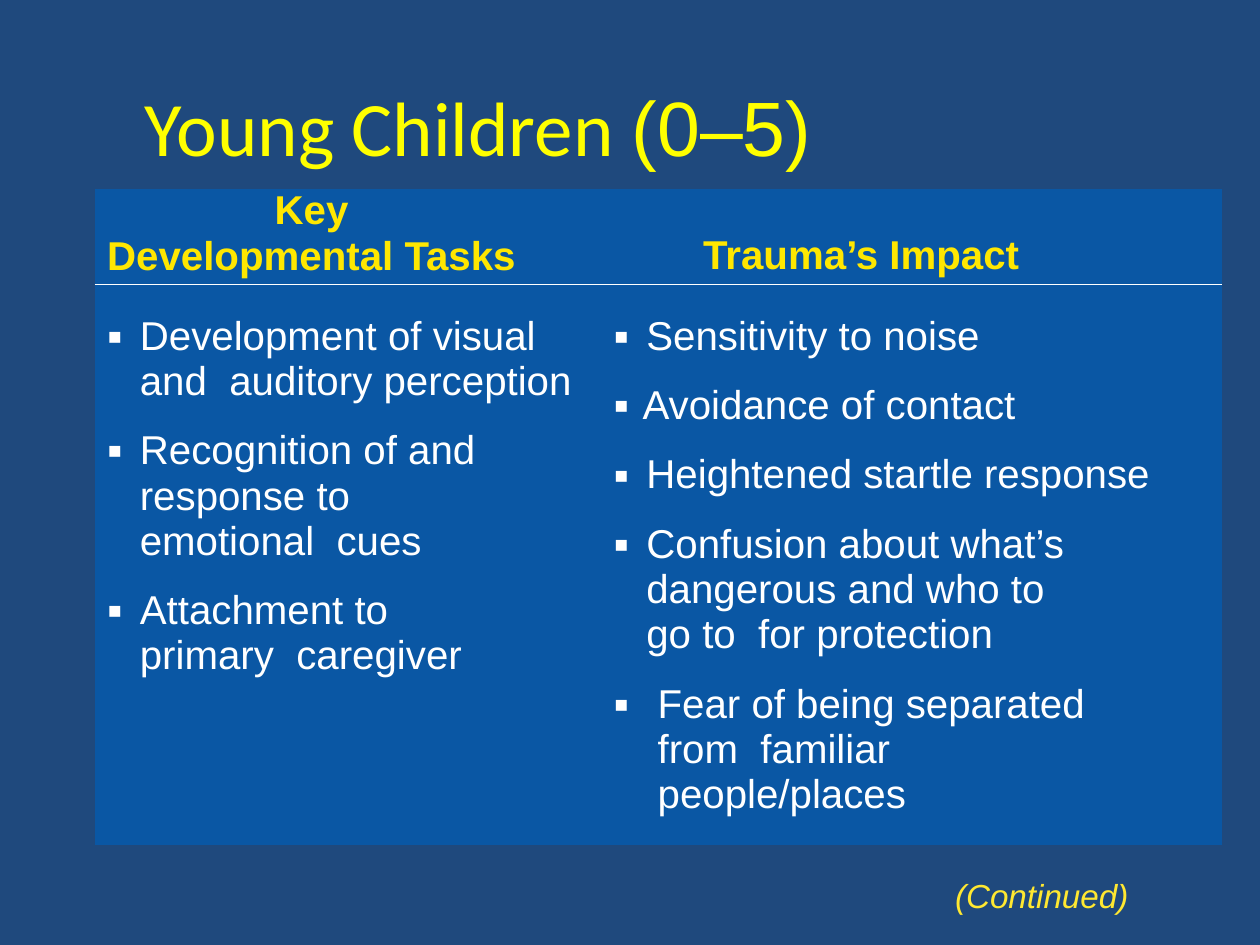
"""Build the slide on developmental tasks and trauma in young children."""
from dataclasses import dataclass

from lxml import etree
from pptx import Presentation
from pptx.dml.color import RGBColor
from pptx.enum.text import MSO_ANCHOR, PP_ALIGN
from pptx.oxml.ns import qn
from pptx.util import Inches, Pt

CENTER, LEFT = PP_ALIGN.CENTER, PP_ALIGN.LEFT
TOP = MSO_ANCHOR.TOP
COLUMNS, ROWS = 100, 75
SLIDE_WIDTH, SLIDE_HEIGHT = Inches(10), Inches(7.5)
NAVY, BLUE, WHITE = "1F497D", "0A57A4", "FFFFFF"
YELLOW, GOLD, PALE_GOLD = "FFFF00", "FFE701", "FFE831"


@dataclass(frozen=True)
class Box:
    """A rectangle in grid columns and rows."""
    left: float
    top: float
    width: float
    height: float


@dataclass(frozen=True)
class Heading:
    """A line of a header cell with its indent in grid columns."""
    text: str
    indent: float
    line_height: float | None = None


@dataclass(frozen=True)
class Bullet:
    """A bulleted line with its margins in grid columns."""
    text: str
    indent: float
    hanging: float = 2.6
    right: float = 0


TABLE = Box(7.5, 15, 89.5, 51.9)
COLUMN_WIDTHS = (39.6, 49.9)
ROW_HEIGHTS = (7.6, 44.3)
HEADING_TOPS = (0, 3.5)
BODY_TOP = 2.3
HEADINGS = (
    (Heading("Key", 14.3, 25.4), Heading("Developmental Tasks", 1)),
    (Heading("Trauma’s Impact", 8.7),),
)
BULLETS = (
    (
        Bullet("Development of visual and  auditory perception", 3.6),
        Bullet("Recognition of and response to emotional  cues", 3.6, right=7.5),
        Bullet("Attachment to primary  caregiver", 3.6, right=7.5),
    ),
    (
        Bullet("Sensitivity to noise", 4.2),
        Bullet("Avoidance of contact", 3.9, 2.3),
        Bullet("Heightened startle response", 4.2),
        Bullet("Confusion about what’s dangerous and who to go to  for protection",
               4.2, right=11.3),
        Bullet("Fear of being separated from  familiar people/places", 5.1, 3.5, 9),
    ),
)


def across(columns: float) -> int:
    """Turn grid columns into a length."""
    return round(SLIDE_WIDTH * columns / COLUMNS)


def down(rows: float) -> int:
    """Turn grid rows into a length."""
    return round(SLIDE_HEIGHT * rows / ROWS)


def place(box: Box) -> tuple[int, int, int, int]:
    """Turn a grid box into left, top, width and height."""
    return across(box.left), down(box.top), across(box.width), down(box.height)


def paint(target, color: str) -> None:
    """Give a fill a solid colour."""
    target.solid()
    target.fore_color.rgb = RGBColor.from_string(color)


def write(paragraph, text: str, *, size: float, color: str, font: str = "Arial",
          bold: bool = False, italic: bool = False, align=LEFT,
          before: float = 0, line_height: float | None = None) -> None:
    """Add a formatted run to a paragraph."""
    paragraph.alignment = align
    paragraph.space_before = Pt(before)
    if line_height:
        paragraph.line_spacing = Pt(line_height)
    run = paragraph.add_run()
    run.text = text
    run.font.name, run.font.size = font, Pt(size)
    run.font.bold, run.font.italic = bold, italic
    paint(run.font.fill, color)


def indent(paragraph, left: float, hanging: float = 0, right: float = 0) -> None:
    """Set the margins of a paragraph in grid columns."""
    properties = paragraph._p.get_or_add_pPr()
    properties.set("marL", str(across(left)))
    properties.set("marR", str(across(right)))
    properties.set("indent", str(-across(hanging)))


def add_bullet_mark(paragraph) -> None:
    """Put a small square before a paragraph."""
    properties = paragraph._p.get_or_add_pPr()
    etree.SubElement(properties, qn("a:buSzPct"), val="109000")
    etree.SubElement(properties, qn("a:buFont"), typeface="Arial")
    etree.SubElement(properties, qn("a:buChar"), char="▪")


def set_borders(cell, ruled_side: str) -> None:
    """Rule one side of a cell in white and clear the others."""
    properties = cell._tc.get_or_add_tcPr()
    for side in ("lnL", "lnR", "lnT", "lnB"):
        line = etree.SubElement(properties, qn(f"a:{side}"), w=str(Pt(1)))
        if side == ruled_side:
            fill = etree.SubElement(line, qn("a:solidFill"))
            etree.SubElement(fill, qn("a:srgbClr"), val=WHITE)
        else:
            etree.SubElement(line, qn("a:noFill"))


def prepare_cell(cell, top: float, ruled_side: str) -> None:
    """Set the borders, fill and margins of a cell."""
    set_borders(cell, ruled_side)
    paint(cell.fill, BLUE)
    cell.margin_left = cell.margin_right = cell.margin_bottom = 0
    cell.margin_top = down(top)
    cell.vertical_anchor = TOP


def add_paragraph(frame, index: int):
    """Return the first paragraph of a frame or a new one."""
    return frame.add_paragraph() if index else frame.paragraphs[0]


def add_text_box(slide, box: Box):
    """Add a text box without margins and return its paragraph."""
    frame = slide.shapes.add_textbox(*place(box)).text_frame
    frame.word_wrap = True
    frame.margin_left = frame.margin_right = frame.margin_bottom = 0
    frame.margin_top = down(0.1)
    return frame.paragraphs[0]


def add_task_table(slide) -> None:
    """Add the table of tasks and impacts."""
    table = slide.shapes.add_table(2, 2, *place(TABLE)).table
    table.first_row = table.horz_banding = False
    for row, height in zip(table.rows, ROW_HEIGHTS):
        row.height = down(height)
    for number, width in enumerate(COLUMN_WIDTHS):
        table.columns[number].width = across(width)
        header, body = table.cell(0, number), table.cell(1, number)
        prepare_cell(header, HEADING_TOPS[number], "lnB")
        prepare_cell(body, BODY_TOP, "lnT")
        for index, heading in enumerate(HEADINGS[number]):
            paragraph = add_paragraph(header.text_frame, index)
            indent(paragraph, heading.indent)
            write(paragraph, heading.text, size=23, color=GOLD, bold=True,
                  line_height=heading.line_height)
        for index, bullet in enumerate(BULLETS[number]):
            paragraph = add_paragraph(body.text_frame, index)
            indent(paragraph, bullet.indent, bullet.hanging, bullet.right)
            write(paragraph, bullet.text, size=23, color=WHITE,
                  before=13.8 if index else 16.2)
            add_bullet_mark(paragraph)


def main() -> None:
    """Build and save the presentation."""
    presentation = Presentation()
    presentation.slide_width, presentation.slide_height = SLIDE_WIDTH, SLIDE_HEIGHT
    slide = presentation.slides.add_slide(presentation.slide_layouts[6])
    paint(slide.background.fill, NAVY)
    title = add_text_box(slide, Box(3.4, 6.2, 69.1, 7.5))
    for text, font in (("Young Children ", "Calibri"), ("(0–5)", "Arial")):
        write(title, text, size=44, color=YELLOW, font=font, align=CENTER)
    add_task_table(slide)
    write(add_text_box(slide, Box(75.8, 69.4, 14.1, 3.4)), "(Continued)",
          size=19, color=PALE_GOLD, italic=True)
    presentation.save("out.pptx")


if __name__ == "__main__":
    main()
